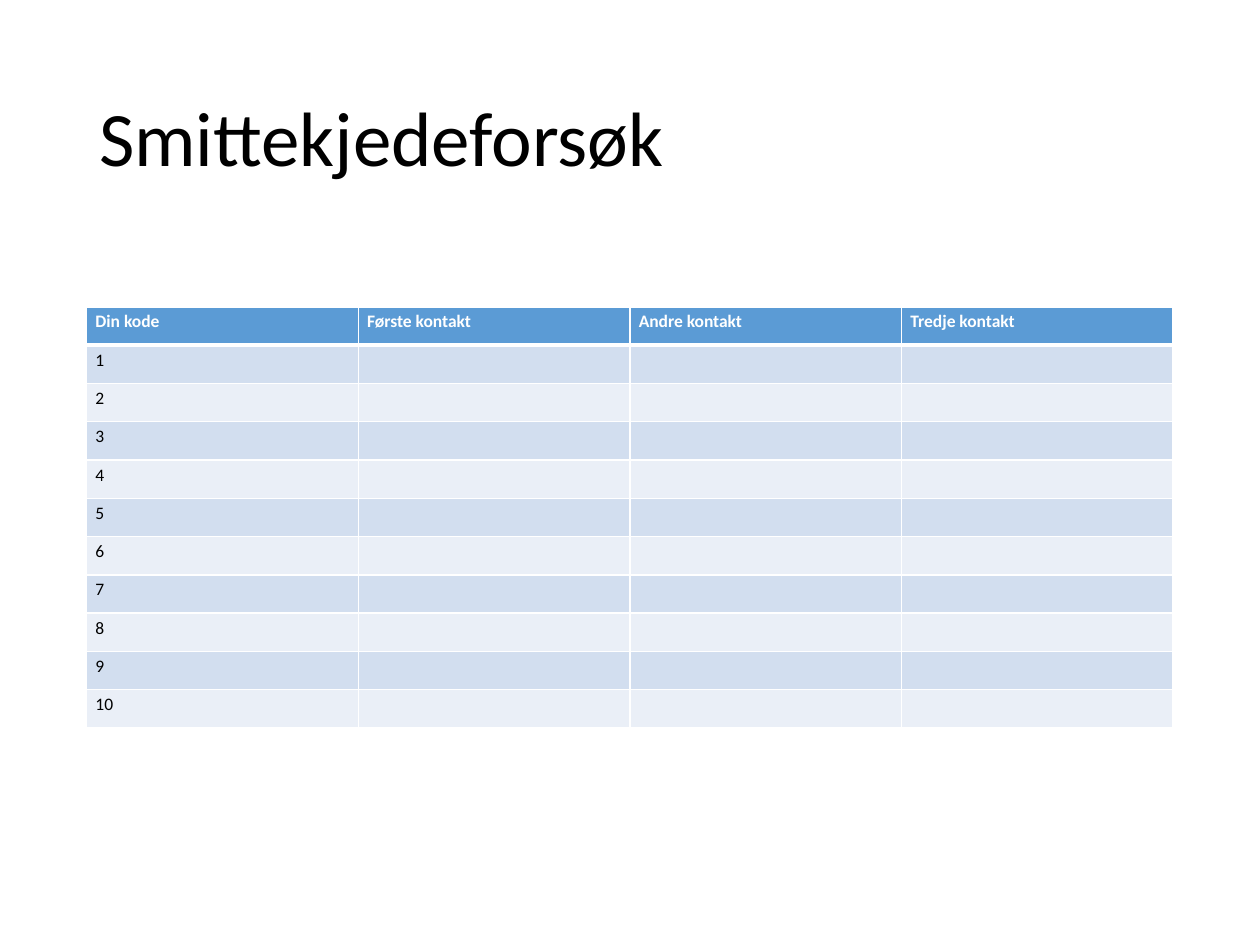
from lxml.etree import SubElement
from pptx import Presentation
from pptx.dml.color import RGBColor
from pptx.enum.text import MSO_ANCHOR, PP_ALIGN
from pptx.oxml.ns import qn
from pptx.util import Pt

FONT = "Calibri"
HEADINGS = ["Din kode", "Første kontakt", "Andre kontakt", "Tredje kontakt"]
CODES = range(1, 11)
HEADER_FILL = "5B9BD5"
BAND_FILLS = ["D2DEEF", "EAEFF7"]
WHITE, BLACK = "FFFFFF", "000000"


def colour(value):
    return RGBColor.from_string(value)


def add_span(para, text, size, text_colour, bold=False):
    span = para.add_run()
    span.text = text
    span.font.name = FONT
    span.font.size = Pt(size)
    span.font.bold = bold
    span.font.color.rgb = colour(text_colour)


def place_title(page, text, left, top, width, height):
    title = page.shapes.title
    title.left, title.top = Pt(left), Pt(top)
    title.width, title.height = Pt(width), Pt(height)
    frame = title.text_frame
    frame.word_wrap = True
    frame.vertical_anchor = MSO_ANCHOR.MIDDLE
    para = frame.paragraphs[0]
    para.alignment = PP_ALIGN.LEFT
    para.line_spacing = 0.9
    add_span(para, text, 44, BLACK)


def add_borders(cell, top, bottom):
    properties = cell._tc.get_or_add_tcPr()
    for side, width in (("L", 1), ("R", 1), ("T", top), ("B", bottom)):
        line = SubElement(properties, qn(f"a:ln{side}"), w=str(Pt(width)))
        fill = SubElement(line, qn("a:solidFill"))
        SubElement(fill, qn("a:srgbClr"), val=WHITE)


def format_cell(cell, text, row):
    header = row == 0
    cell.margin_left = cell.margin_right = Pt(5.1)
    cell.margin_top = cell.margin_bottom = Pt(2.6)
    add_borders(cell, 3 if row == 1 else 1, 3 if header else 1)
    cell.fill.solid()
    fill = HEADER_FILL if header else BAND_FILLS[(row - 1) % 2]
    cell.fill.fore_color.rgb = colour(fill)
    para = cell.text_frame.paragraphs[0]
    if text:
        add_span(para, text, 10, WHITE if header else BLACK, header)
    else:
        SubElement(para._p, qn("a:endParaRPr"), sz="1000")


def place_contact_table(page, left, top, width, height):
    blanks = [""] * (len(HEADINGS) - 1)
    rows = [HEADINGS] + [[str(code)] + blanks for code in CODES]
    table = page.shapes.add_table(
        len(rows), len(HEADINGS), Pt(left), Pt(top), Pt(width), Pt(height)
    ).table
    for column in table.columns:
        column.width = Pt(width / len(HEADINGS))
    for row, texts in enumerate(rows):
        table.rows[row].height = Pt(height / len(rows))
        for column, text in enumerate(texts):
            format_cell(table.cell(row, column), text, row)


def main():
    deck = Presentation()
    deck.slide_width, deck.slide_height = Pt(720), Pt(540)
    page = deck.slides.add_slide(deck.slide_layouts[5])
    place_title(page, "Smittekjedeforsøk", 49.5, 28.75, 621, 104.4)
    place_contact_table(page, 49.5, 175.3, 621, 241)
    deck.save("out.pptx")


if __name__ == "__main__":
    main()
